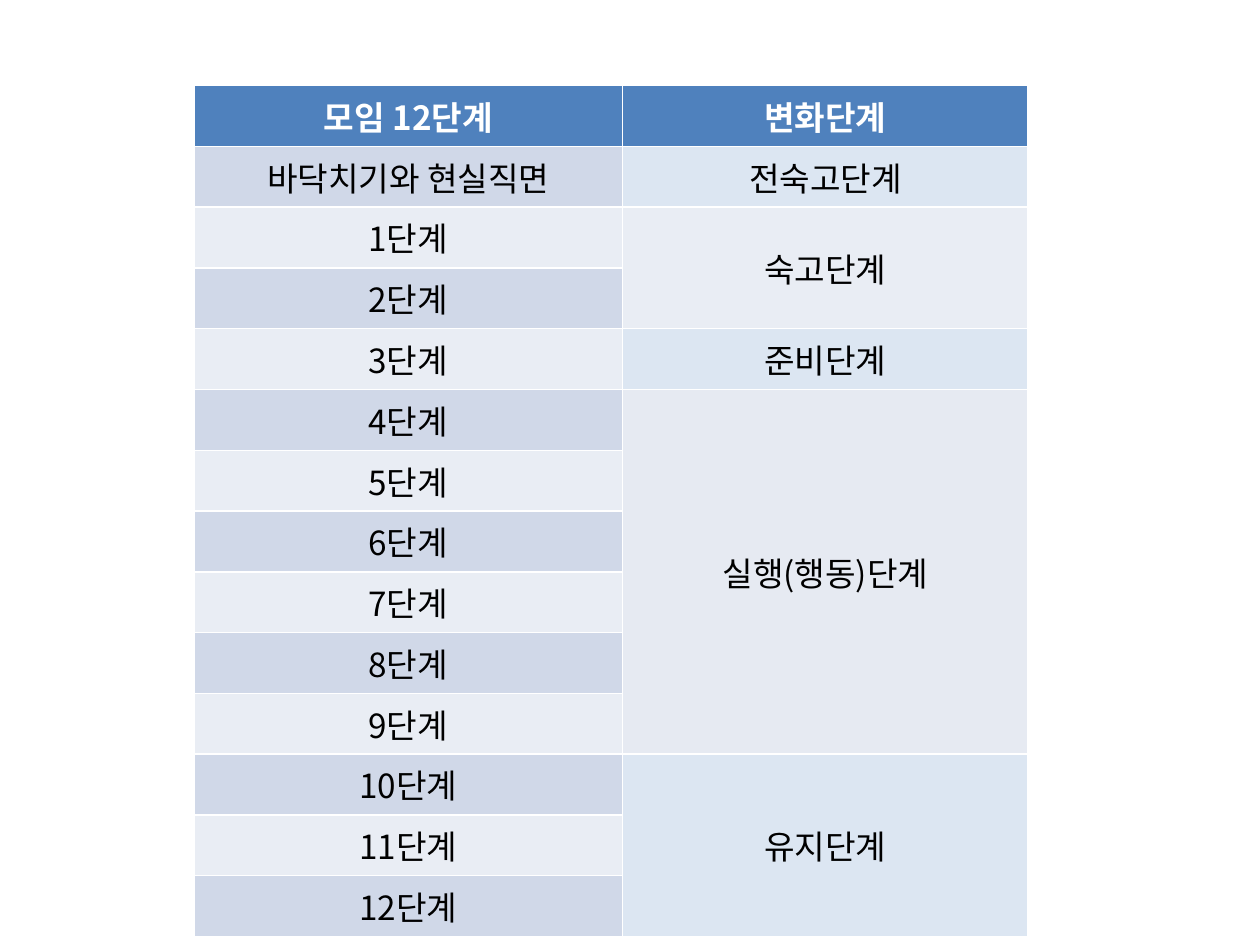
from lxml import etree
from pptx import Presentation
from pptx.dml.color import RGBColor
from pptx.enum.text import MSO_ANCHOR, PP_ALIGN
from pptx.oxml.ns import qn
from pptx.util import Inches, Pt

CENTER = PP_ALIGN.CENTER
TOP, MIDDLE = MSO_ANCHOR.TOP, MSO_ANCHOR.MIDDLE
FONT = "Noto Sans CJK KR"
WHITE = RGBColor(0xFF, 0xFF, 0xFF)
BLACK = RGBColor(0x00, 0x00, 0x00)
BLUE = RGBColor(0x4F, 0x81, 0xBD)
BAND_DARK = RGBColor(0xD0, 0xD8, 0xE8)
BAND_LIGHT = RGBColor(0xE9, 0xED, 0xF4)
SKY = RGBColor(0xDC, 0xE6, 0xF2)
MIST = RGBColor(0xE6, 0xEA, 0xF2)

HEADERS = ["모임 12단계", "변화단계"]
STEPS = ["바닥치기와 현실직면"] + [f"{n}단계" for n in range(1, 13)]
STAGES = [
    ("전숙고단계", 1, SKY),
    ("숙고단계", 2, BAND_LIGHT),
    ("준비단계", 1, SKY),
    ("실행(행동)단계", 6, MIST),
    ("유지단계", 3, SKY),
]
LEFT, TABLE_TOP, HEIGHT = 1.54, 0.68, 6.54
COL_WIDTHS = [3.4, 3.22]


def fill_cell(cell, text, fill, anchor, color=BLACK, bold=False):
    cell.fill.solid()
    cell.fill.fore_color.rgb = fill
    cell.vertical_anchor = anchor
    p = cell.text_frame.paragraphs[0]
    p.text = text
    p.alignment = CENTER
    font = p.font
    font.name, font.size, font.bold = FONT, Pt(19), bold
    font.color.rgb = color
    ea = etree.SubElement(p._p.pPr.find(qn("a:defRPr")), qn("a:ea"))
    ea.set("typeface", FONT)


prs = Presentation()
prs.slide_width, prs.slide_height = Inches(10), Inches(7.5)
s = prs.slides.add_slide(prs.slide_layouts[6])

rows = len(STEPS) + 1
table = s.shapes.add_table(
    rows, len(COL_WIDTHS), Inches(LEFT), Inches(TABLE_TOP),
    Inches(sum(COL_WIDTHS)), Inches(HEIGHT),
).table
for column, width in zip(table.columns, COL_WIDTHS):
    column.width = Inches(width)

for col, (text, anchor) in enumerate(zip(HEADERS, (TOP, MIDDLE))):
    fill_cell(table.cell(0, col), text, BLUE, anchor, WHITE, True)

for row, text in enumerate(STEPS, 1):
    fill_cell(table.cell(row, 0), text, BAND_DARK if row % 2 else BAND_LIGHT, TOP)

row = 1
for text, span, fill in STAGES:
    cell = table.cell(row, 1)
    if span > 1:
        cell.merge(table.cell(row + span - 1, 1))
    fill_cell(cell, text, fill, MIDDLE)
    row += span

prs.save("out.pptx")
